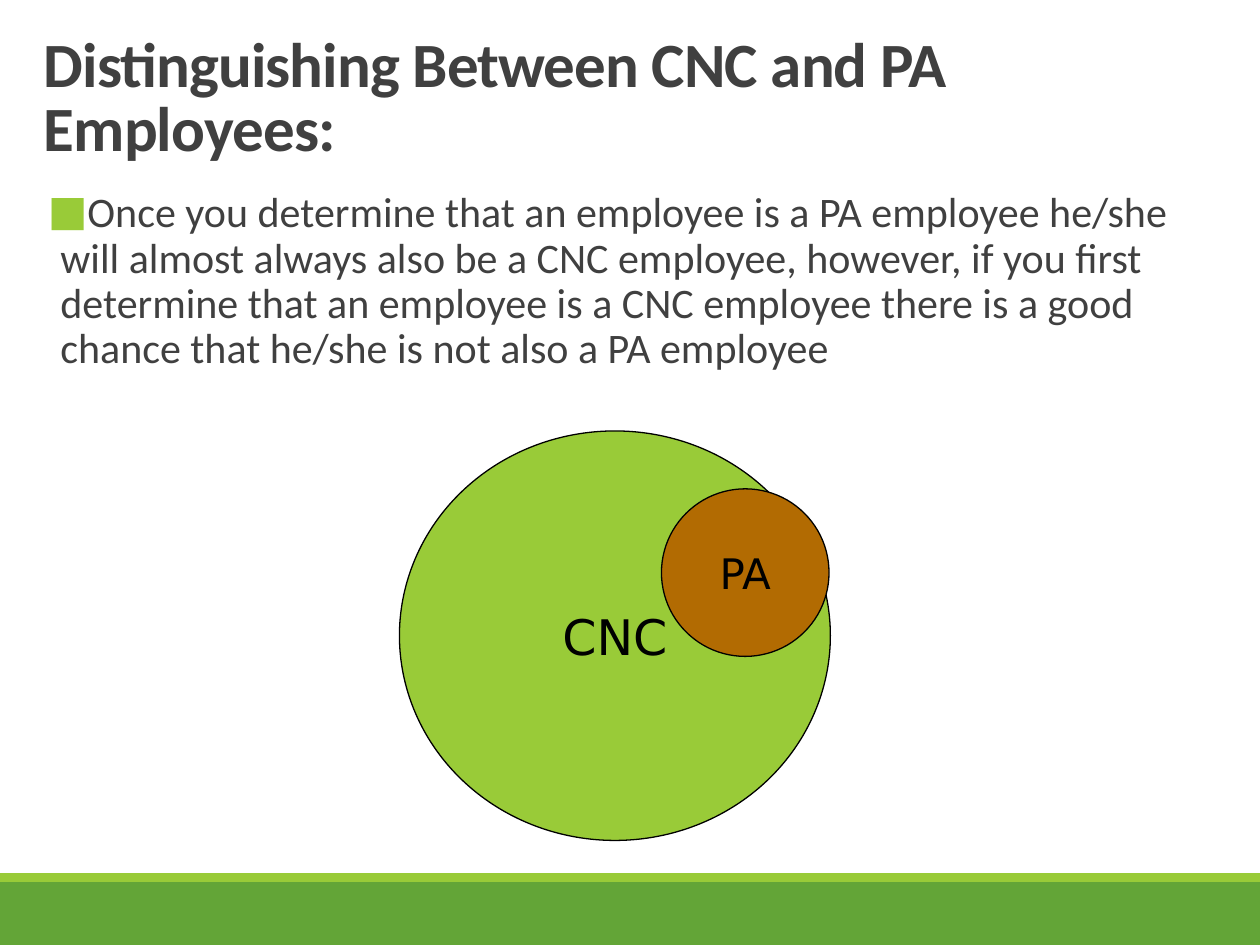
from dataclasses import dataclass

from lxml.etree import SubElement
from pptx import Presentation
from pptx.dml.color import RGBColor
from pptx.enum.shapes import MSO_SHAPE
from pptx.enum.text import MSO_ANCHOR, PP_ALIGN
from pptx.oxml.ns import qn
from pptx.util import Inches, Pt

WIDTH, HEIGHT = 10, 7.5
COLORS = {
    "text": "404040",
    "lime": "99CB38",
    "green": "63A537",
    "brown": "B26B02",
    "black": "000000",
}


@dataclass
class Area:
    """A rectangle in shares of the slide's width and height."""
    left: float
    top: float
    width: float
    height: float

    def emu(self) -> tuple:
        return (Inches(self.left * WIDTH), Inches(self.top * HEIGHT),
                Inches(self.width * WIDTH), Inches(self.height * HEIGHT))


@dataclass
class Band:
    area: Area
    color: str


@dataclass
class Circle:
    label: str
    area: Area
    color: str
    size: int


def inches(left: float, top: float, width: float, height: float) -> Area:
    return Area(left / WIDTH, top / HEIGHT, width / WIDTH, height / HEIGHT)


BANDS = [
    Band(inches(0, 7, WIDTH, 0.5), "green"),
    Band(inches(0, 6.93, WIDTH, 0.07), "lime"),
]
CIRCLES = [
    Circle("CNC", inches(3.17, 3.42, 3.42, 3.25), "lime", 28),
    Circle("PA", inches(5.25, 3.88, 1.33, 1.33), "brown", 24),
]
TITLE_AREA = inches(0.25, 0, 9.51, 1.59)
BODY_AREA = inches(0.38, 1.47, 9, 5.42)
TITLE = "Distinguishing Between CNC and PA Employees:"
BODY = (
    "Once you determine that an employee is a PA employee he/she will almost "
    "always also be a CNC employee, however, if you first determine that an "
    "employee is a CNC employee there is a good chance that he/she is not "
    "also a PA employee"
)


def rgb(name: str) -> RGBColor:
    return RGBColor.from_string(COLORS[name])


def style(paragraph, face: str, size: int, color: str, bold: bool = False) -> None:
    for run in paragraph.runs:
        run.font.name = face
        run.font.size = Pt(size)
        run.font.bold = bold
        run.font.color.rgb = rgb(color)


def add_filled(slide, preset, area: Area, color: str):
    shape = slide.shapes.add_shape(preset, *area.emu())
    shape.shadow.inherit = False
    shape.fill.solid()
    shape.fill.fore_color.rgb = rgb(color)
    return shape


def add_band(slide, band: Band) -> None:
    add_filled(slide, MSO_SHAPE.RECTANGLE, band.area, band.color).line.fill.background()


def add_circle(slide, circle: Circle) -> None:
    shape = add_filled(slide, MSO_SHAPE.OVAL, circle.area, circle.color)
    shape.line.color.rgb = rgb("black")
    shape.line.width = Pt(0.75)
    frame = shape.text_frame
    frame.text = circle.label
    frame.word_wrap = False
    frame.vertical_anchor = MSO_ANCHOR.MIDDLE
    label = frame.paragraphs[0]
    label.alignment = PP_ALIGN.CENTER
    style(label, "DejaVu Sans", circle.size, "black")


def add_text(slide, area: Area, text: str, line_spacing: float):
    frame = slide.shapes.add_textbox(*area.emu()).text_frame
    frame.word_wrap = True
    frame.text = text
    frame.paragraphs[0].line_spacing = line_spacing
    return frame


def add_bullet(paragraph, symbol: str, color: str, indent: float) -> None:
    properties = paragraph._p.get_or_add_pPr()
    properties.set("marL", str(Inches(indent)))
    properties.set("indent", str(-Inches(indent)))
    bullet_color = SubElement(properties, qn("a:buClr"))
    SubElement(bullet_color, qn("a:srgbClr"), val=COLORS[color])
    SubElement(properties, qn("a:buFont"), typeface="Calibri")
    SubElement(properties, qn("a:buChar"), char=symbol)


def main() -> None:
    prs = Presentation()
    prs.slide_width, prs.slide_height = Inches(WIDTH), Inches(HEIGHT)
    slide = prs.slides.add_slide(prs.slide_layouts[6])

    # Footer bands
    for band in BANDS:
        add_band(slide, band)

    # Title, with slightly tightened letters
    title = add_text(slide, TITLE_AREA, TITLE, 0.85)
    title.vertical_anchor = MSO_ANCHOR.MIDDLE
    heading = title.paragraphs[0]
    style(heading, "Calibri", 36, "text", bold=True)
    heading.runs[0].font._element.set("spc", "-50")

    # Bulleted explanation
    body = add_text(slide, BODY_AREA, BODY, 0.9)
    body.margin_left = body.margin_right = 0
    explanation = body.paragraphs[0]
    explanation.space_after = Pt(2)
    add_bullet(explanation, "■", "lime", 0.1)
    style(explanation, "Calibri", 24, "text")

    # Overlapping employee groups
    for circle in CIRCLES:
        add_circle(slide, circle)

    prs.save("out.pptx")


if __name__ == "__main__":
    main()
